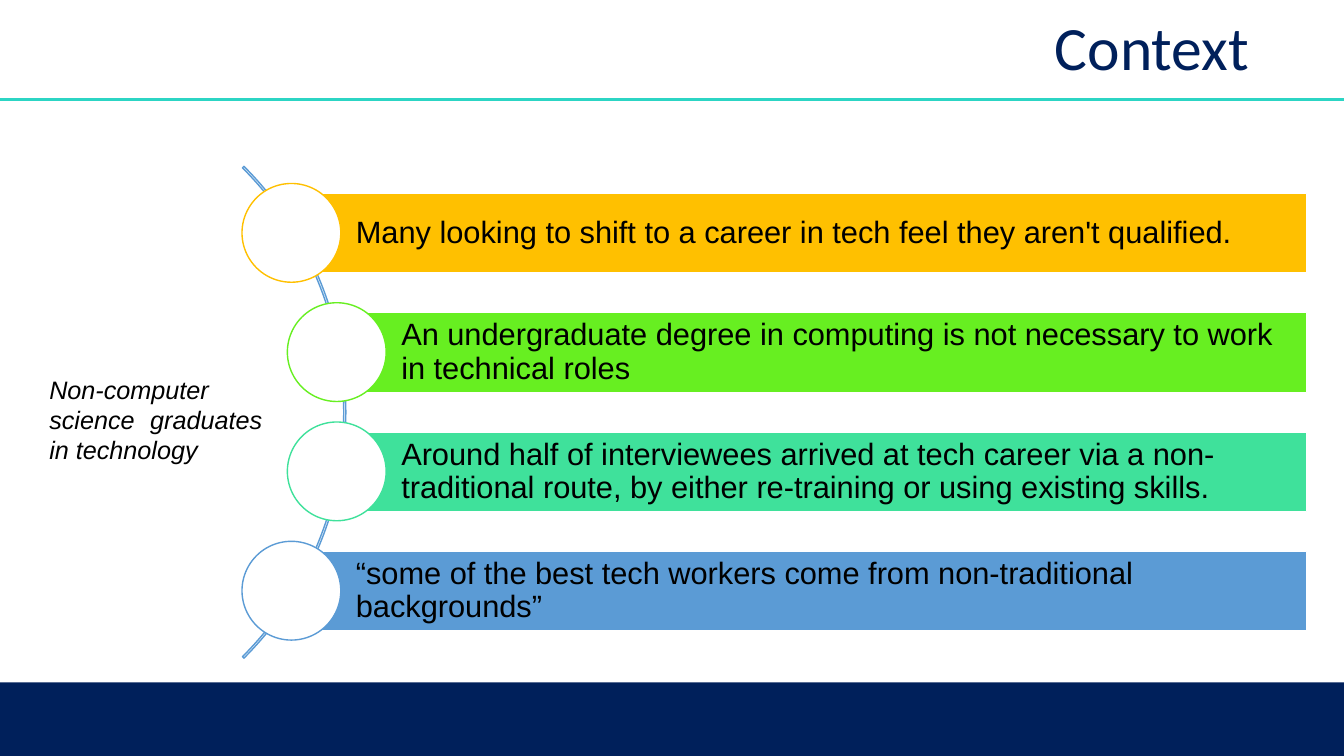
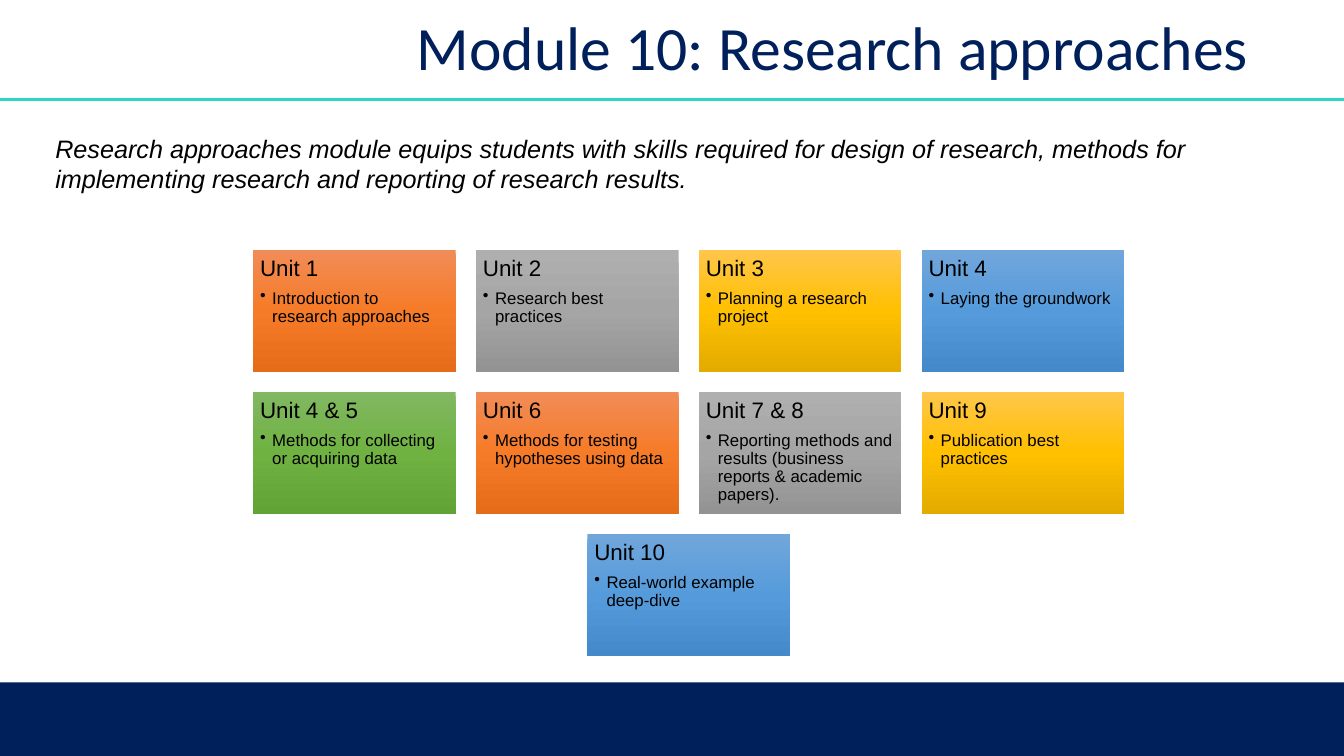
"""Build two slides on computing careers and a research module."""
from copy import deepcopy

from lxml import etree
from pptx import Presentation
from pptx.dml.color import RGBColor
from pptx.enum.shapes import MSO_CONNECTOR, MSO_SHAPE
from pptx.enum.text import MSO_ANCHOR as ANCHOR, PP_ALIGN as ALIGN
from pptx.oxml.ns import qn
from pptx.util import Inches, Pt

COLORS = {
    "navy": "00205B", "teal": "2CD5C4", "black": "000000", "white": "FFFFFF",
    "gold": "FFC000", "lime": "67EF21", "mint": "3FE19B", "blue": "5B9BD5",
}
GRADIENTS = {
    "orange": ("F18C57", "F67B28", "E56C19"),
    "gray": ("AFAFAF", "A5A5A5", "939393"),
    "gold": ("FFC64B", "FFC000", "E3AB00"),
    "blue": ("71A6DB", "559BDB", "448ACA"),
    "green": ("81B861", "6FB242", "62A336"),
}
TITLE = {"name": "Calibri", "size": Pt(44), "color": "navy"}
LEAD = {"name": "Arial", "size": Pt(18), "italic": True}
FINDING = {"name": "Arial", "size": Pt(22)}
UNIT = {"name": "Arial", "size": Pt(16)}
TOPIC = {"name": "Arial", "size": Pt(12)}

TOPIC_LEAD = "Non-computer science graduates in technology"
FINDINGS = [
    ("Many looking to shift to a career in tech feel they aren't qualified.", "gold", 2.9),
    ("An undergraduate degree in computing is not necessary to work in technical roles",
     "lime", 3.35),
    ("Around half of interviewees arrived at tech career via a non-traditional route, "
     "by either re-training or using existing skills.", "mint", 3.35),
    ("“some of the best tech workers come from non-traditional backgrounds”", "blue", 2.9),
]
MODULE_LEAD = ("Research approaches module equips students with skills required for design "
               "of research, methods for implementing research and reporting of research results.")
UNIT_ROWS = [
    [("Unit 1", "Introduction to research approaches", "orange"),
     ("Unit 2", "Research best practices", "gray"),
     ("Unit 3", "Planning a research project", "gold"),
     ("Unit 4", "Laying the groundwork", "blue")],
    [("Unit 4 & 5", "Methods for collecting or acquiring data", "green"),
     ("Unit 6", "Methods for testing hypotheses using data", "orange"),
     ("Unit 7 & 8", "Reporting methods and results (business reports & academic papers).", "gray"),
     ("Unit 9", "Publication best practices", "gold")],
    [("Unit 10", "Real-world example deep-dive", "blue")],
]


def rgb(name):
    return RGBColor.from_string(COLORS[name])


def write(paragraph, text, style, **layout):
    run = paragraph.add_run()
    run.text = text
    for key, value in ({"color": "black"} | style).items():
        if key == "color":
            run.font.color.rgb = rgb(value)
        else:
            setattr(run.font, key, value)
    for key, value in layout.items():
        setattr(paragraph, key, value)


def add_box(slide, kind, box, fill=None, line=None):
    shape = slide.shapes.add_shape(kind, *map(Inches, box))
    shape.shadow.inherit = False
    if fill:
        shape.fill.solid()
        shape.fill.fore_color.rgb = rgb(fill)
    else:
        shape.fill.background()
    if line:
        shape.line.color.rgb = rgb(line)
        shape.line.width = Pt(1)
    else:
        shape.line.fill.background()
    return shape


def set_frame(shape, anchor, left, others):
    frame = shape.text_frame
    frame.word_wrap = True
    frame.vertical_anchor = anchor
    frame.margin_left = Inches(left)
    frame.margin_top = frame.margin_right = frame.margin_bottom = Inches(others)
    return frame


def add_lead(slide, text, box, align):
    frame = slide.shapes.add_textbox(*map(Inches, box)).text_frame
    frame.word_wrap = True
    write(frame.paragraphs[0], text, LEAD, alignment=align)


def add_slide(prs, layout, title):
    slide = prs.slides.add_slide(layout)
    write(slide.shapes.title.text_frame.paragraphs[0], title, TITLE,
          alignment=ALIGN.RIGHT, line_spacing=0.9)
    return slide


def decorate_layout(layout, slide):
    """Set the shared title place, rule and footer band on the layout."""
    heading = layout.placeholders[0]
    for key, value in {"left": 2.7, "top": 0.14, "width": 9.79, "height": 0.72}.items():
        setattr(heading, key, Inches(value))
    rule = slide.shapes.add_connector(
        MSO_CONNECTOR.STRAIGHT, 0, Inches(0.99), Inches(13.33), Inches(0.99))
    rule.line.color.rgb = rgb("teal")
    rule.line.width = Pt(2)
    etree.SubElement(rule.element.spPr, qn("a:effectLst"))
    band = add_box(slide, MSO_SHAPE.RECTANGLE, (0, 6.77, 13.33, 0.73), "navy")
    for part in (rule, band):
        layout.shapes.element.append(part.element)


def add_findings(slide):
    arc = add_box(slide, MSO_SHAPE.BLOCK_ARC, (-3.47, 0.64, 6.9, 6.9), line="blue")
    for index, value in enumerate((189, 27, 0.003)):
        arc.adjustments[index] = value
    first, last, right = 1.92, 5.47, 12.96
    pitch = (last - first) / (len(FINDINGS) - 1)
    for index, (text, color, left) in enumerate(FINDINGS):
        top = first + index * pitch
        bar = add_box(slide, MSO_SHAPE.RECTANGLE, (left, top, right - left, 0.79), color, "white")
        frame = set_frame(bar, ANCHOR.MIDDLE, 0.63, 0.06)
        write(frame.paragraphs[0], text, FINDING, alignment=ALIGN.LEFT, line_spacing=0.9)
        add_box(slide, MSO_SHAPE.OVAL, (left - 0.5, top - 0.1, 0.98, 0.98), "white", color)


def fill_gradient(shape, hexes):
    shape.fill.gradient()
    stops = shape.element.spPr.find(qn("a:gradFill")).find(qn("a:gsLst"))
    stops.insert(1, deepcopy(stops[0]))
    for stop, position, value in zip(shape.fill.gradient_stops, (0, 0.5, 1), hexes):
        stop.position = position
        stop.color.rgb = RGBColor.from_string(value)
    shape.fill.gradient_angle = 270


def add_bullet(paragraph):
    properties = paragraph._p.get_or_add_pPr()
    properties.set("marL", str(Inches(0.12)))
    properties.set("indent", str(-Inches(0.12)))
    etree.SubElement(properties, qn("a:buChar")).set("char", "•")


def add_units(slide):
    width, height, gap, center, first = 2.01, 1.21, 0.2, 6.83, 2.48
    for row, units in enumerate(UNIT_ROWS):
        left = center - (len(units) * (width + gap) - gap) / 2
        for column, (unit, topic, color) in enumerate(units):
            box = (left + column * (width + gap), first + row * (height + gap), width, height)
            card = add_box(slide, MSO_SHAPE.RECTANGLE, box)
            fill_gradient(card, GRADIENTS[color])
            frame = set_frame(card, ANCHOR.TOP, 0.07, 0.07)
            write(frame.paragraphs[0], unit, UNIT,
                  alignment=ALIGN.LEFT, line_spacing=0.9, space_after=Pt(6))
            bullet = frame.add_paragraph()
            add_bullet(bullet)
            write(bullet, topic, TOPIC, alignment=ALIGN.LEFT, line_spacing=0.9, level=1)


def main():
    prs = Presentation()
    prs.slide_width, prs.slide_height = Inches(13.33), Inches(7.5)
    layout = prs.slide_layouts[5]

    context = add_slide(prs, layout, "Context")
    decorate_layout(layout, context)
    add_lead(context, TOPIC_LEAD, (0.39, 3.66, 2.31, 1.01), ALIGN.JUSTIFY)
    add_findings(context)

    module = add_slide(prs, layout, "Module 10: Research approaches")
    add_units(module)
    add_lead(module, MODULE_LEAD, (0.45, 1.27, 12.54, 0.71), ALIGN.LEFT)
    prs.save("out.pptx")


if __name__ == "__main__":
    main()
